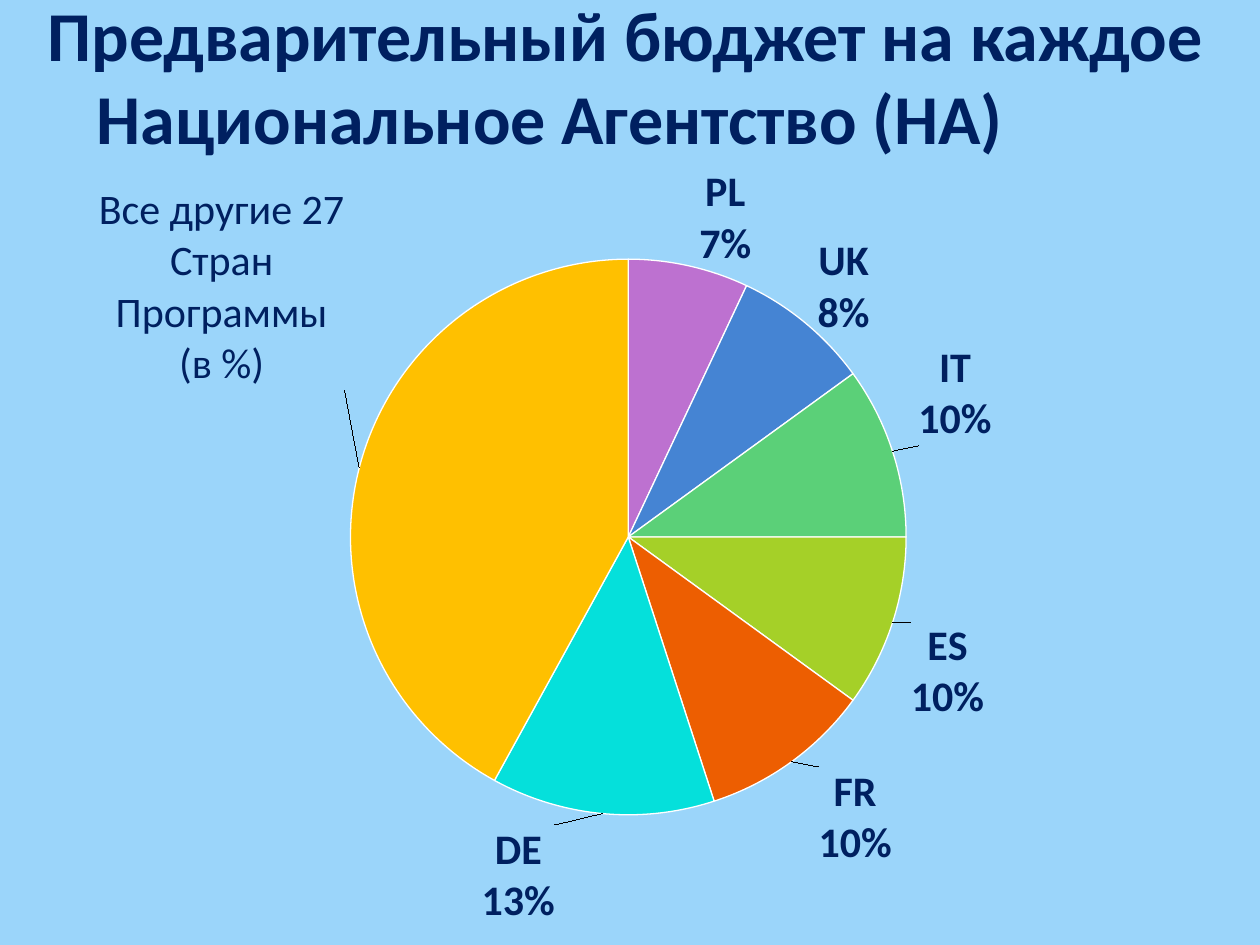
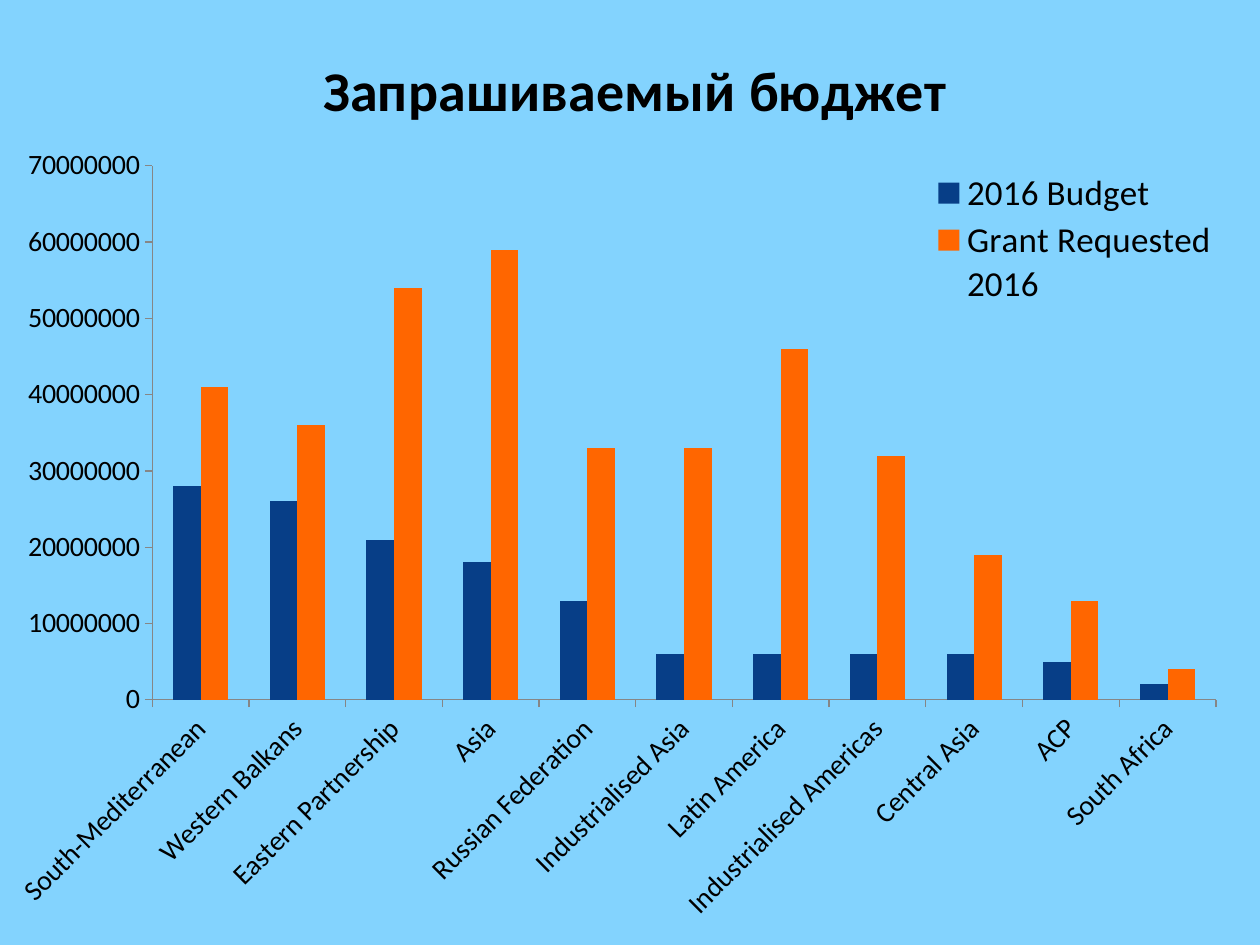
from lxml import etree
from pptx import Presentation
from pptx import util as u
from pptx.chart.data import CategoryChartData
from pptx.dml.color import RGBColor
from pptx.enum import chart as c
from pptx.enum import text as t
from pptx.oxml import ns

EMU_PER_PX = 914400 / 126
FONT = "Calibri"
NAVY, BLACK, WHITE, GREY = "002060", "000000", "FFFFFF", "868686"
TITLE_ONLY, BLANK = 5, 6

# category, percent, slice colour, label shift in px
COUNTRIES = [
    ("PL", 7, "BD71D0", (9, 11)),
    ("UK", 8, "4584D3", (8, 22)),
    ("IT", 10, "5BD078", (19, -3)),
    ("ES", 10, "A5D028", (11, -4)),
    ("FR", 10, "ED5E01", (23, -1)),
    ("DE", 13, "05E0DB", (-46, 4)),
    ("All 27 other Programme Countries", 42, "FFC000", (-8, -76)),
]
OTHERS_LABEL = "Все другие 27 Стран Программы (в %)"

# region, budget and requested grant in millions
REGIONS = [
    ("South-Mediterranean", 28, 41),
    ("Western Balkans", 26, 36),
    ("Eastern Partnership", 21, 54),
    ("Asia", 18, 59),
    ("Russian Federation", 13, 33),
    ("Industrialised Asia", 6, 33),
    ("Latin America", 6, 46),
    ("Industrialised Americas", 6, 32),
    ("Central Asia", 6, 19),
    ("ACP", 5, 13),
    ("South Africa", 2, 4),
]
BUDGET_SERIES = [("2016 Budget", "073E87"), ("Grant Requested 2016", "FF6600")]


def px(length):
    return u.Emu(round(length * EMU_PER_PX))


def rgb(value):
    return RGBColor.from_string(value)


def set_font(font, size, color=BLACK, bold=False):
    font.name, font.size, font.bold = FONT, u.Pt(size), bold
    font.color.rgb = rgb(color)


def write_text(frame, text, align=t.PP_ALIGN.LEFT, **font_format):
    paragraph = frame.paragraphs[0]
    paragraph.alignment = align
    run = paragraph.add_run()
    run.text = text
    set_font(run.font, **font_format)
    return paragraph


def place(element, index, x, y, width=None, height=None, inner=False, edge=True):
    """Give a chart part a manual layout in fractions of the chart."""
    for old in element.findall(ns.qn("c:layout")):
        element.remove(old)
    layout = etree.Element(ns.qn("c:layout"))
    manual = etree.SubElement(layout, ns.qn("c:manualLayout"))
    settings = [
        ("layoutTarget", "inner" if inner else None),
        ("xMode", "edge" if edge else None),
        ("yMode", "edge" if edge else None),
        ("x", x), ("y", y), ("w", width), ("h", height),
    ]
    for tag, value in settings:
        if value is not None:
            etree.SubElement(manual, ns.qn(f"c:{tag}")).set("val", str(value))
    element.insert(index, layout)


class Deck:
    def __init__(self):
        self.presentation = Presentation()
        self.presentation.slide_width = px(1260)
        self.presentation.slide_height = px(945)
        self.slide = None

    def add_slide(self, layout, background):
        layouts = self.presentation.slide_layouts
        self.slide = self.presentation.slides.add_slide(layouts[layout])
        fill = self.slide.background.fill
        fill.solid()
        fill.fore_color.rgb = rgb(background)

    def title(self, content, left, top, width, height, hanging):
        shape = self.slide.shapes.title
        shape.left, shape.top = px(left), px(top)
        shape.width, shape.height = px(width), px(height)
        frame = shape.text_frame
        frame.word_wrap = True
        frame.auto_size = t.MSO_AUTO_SIZE.NONE
        frame.vertical_anchor = t.MSO_ANCHOR.MIDDLE
        paragraph = write_text(frame, content, size=40, color=NAVY, bold=True)
        properties = paragraph._p.get_or_add_pPr()
        properties.set("marL", str(px(hanging)))
        properties.set("indent", str(-px(hanging)))

    def chart(self, kind, data, left, top, width, height, plot_box):
        frame = self.slide.shapes.add_chart(
            kind, px(left), px(top), px(width), px(height), data)
        chart = frame.chart
        chart.has_legend = chart.has_title = False
        plot_area = chart._chartSpace.chart.plotArea
        place(plot_area, 0, *plot_box, inner=True)
        return chart

    def slice_label(self, point, shift, chart_size, custom=None):
        """Label a slice with its name and percent, or with custom text."""
        label = point.data_label
        if custom:
            write_text(label.text_frame, custom, align=t.PP_ALIGN.CENTER,
                       size=24, color=NAVY)
        else:
            set_font(label.font, 24, NAVY, True)
        label.position = c.XL_LABEL_POSITION.OUTSIDE_END
        element = label._get_or_add_dLbl()
        for tag, value in (("showVal", 0), ("showCatName", 1), ("showPercent", 1)):
            element.find(ns.qn(f"c:{tag}")).set("val", str(value))
        etree.SubElement(element, ns.qn("c:separator")).text = "\n"
        x, y = (round(s / size, 3) for s, size in zip(shift, chart_size))
        place(element, 1, x, y, edge=False)

    def axis(self, axis):
        axis.has_major_gridlines = False
        axis.major_tick_mark = c.XL_TICK_MARK.OUTSIDE
        axis.minor_tick_mark = c.XL_TICK_MARK.NONE
        axis.format.line.color.rgb = rgb(GREY)
        axis.format.line.width = u.Pt(0.75)
        axis.tick_labels.number_format = "General"
        axis.tick_labels.number_format_is_linked = False
        set_font(axis.tick_labels.font, 16)

    def chart_title(self, chart, content, x, y):
        chart.has_title = True
        title = chart.chart_title
        write_text(title.text_frame, content, align=t.PP_ALIGN.CENTER,
                   size=32, bold=True)
        title.include_in_layout = False
        place(title._element, 1, x, y)

    def legend(self, chart, *box):
        chart.has_legend = True
        legend = chart.legend
        legend.position = c.XL_LEGEND_POSITION.RIGHT
        legend.include_in_layout = False
        set_font(legend.font, 20)
        place(legend._element, 1, *box)


def agency_slide(deck):
    deck.add_slide(TITLE_ONLY, "9BD5FA")
    deck.title("Предварительный бюджет на каждое Национальное Агентство (НА)",
               35, 16, 1234, 118, hanging=49)
    data = CategoryChartData(number_format="General")
    data.categories = [name for name, *_ in COUNTRIES]
    data.add_series("Series 1", [percent for _, percent, *_ in COUNTRIES])
    chart_size = (1260, 801)
    chart = deck.chart(c.XL_CHART_TYPE.PIE, data, -35, 135, *chart_size,
                       plot_box=(0.306, 0.155, 0.441, 0.694))
    chart.plots[0].vary_by_categories = True
    series = chart.plots[0].series[0]
    labels = series.data_labels
    labels.show_value = False
    labels.show_category_name = labels.show_percentage = True
    labels.number_format, labels.number_format_is_linked = "0%", False
    set_font(labels.font, 24, NAVY, True)
    for index, (_, _, color, shift) in enumerate(COUNTRIES):
        point = series.points[index]
        point.format.fill.solid()
        point.format.fill.fore_color.rgb = rgb(color)
        point.format.line.color.rgb = rgb(WHITE)
        point.format.line.width = u.Pt(0.75)
        is_last = index == len(COUNTRIES) - 1
        deck.slice_label(point, shift, chart_size, OTHERS_LABEL if is_last else None)


def request_slide(deck):
    deck.add_slide(BLANK, "83D3FE")
    data = CategoryChartData(number_format="General")
    data.categories = [name for name, *_ in REGIONS]
    for column, (name, _) in enumerate(BUDGET_SERIES, start=1):
        data.add_series(name, [region[column] * 1_000_000 for region in REGIONS])
    chart = deck.chart(c.XL_CHART_TYPE.COLUMN_CLUSTERED, data, 4, 0, 1256, 942,
                       plot_box=(0.118, 0.176, 0.847, 0.567))
    plot = chart.plots[0]
    plot.gap_width, plot.overlap = 150, 0
    plot.vary_by_categories = False
    for series, (_, color) in zip(plot.series, BUDGET_SERIES):
        series.format.fill.solid()
        series.format.fill.fore_color.rgb = rgb(color)
    for axis in (chart.category_axis, chart.value_axis):
        deck.axis(axis)
    chart.value_axis.minimum_scale = 0
    chart.value_axis.maximum_scale = 70_000_000
    chart.value_axis.major_unit = 10_000_000
    label_body = chart.category_axis._element.find(ns.qn("c:txPr")).find(ns.qn("a:bodyPr"))
    label_body.set("rot", str(-45 * 60000))
    deck.chart_title(chart, "Запрашиваемый бюджет", 0.246, 0.043)
    deck.legend(chart, 0.735, 0.178, 0.235, 0.15)


def main():
    deck = Deck()
    agency_slide(deck)
    request_slide(deck)
    deck.presentation.save("out.pptx")


if __name__ == "__main__":
    main()
